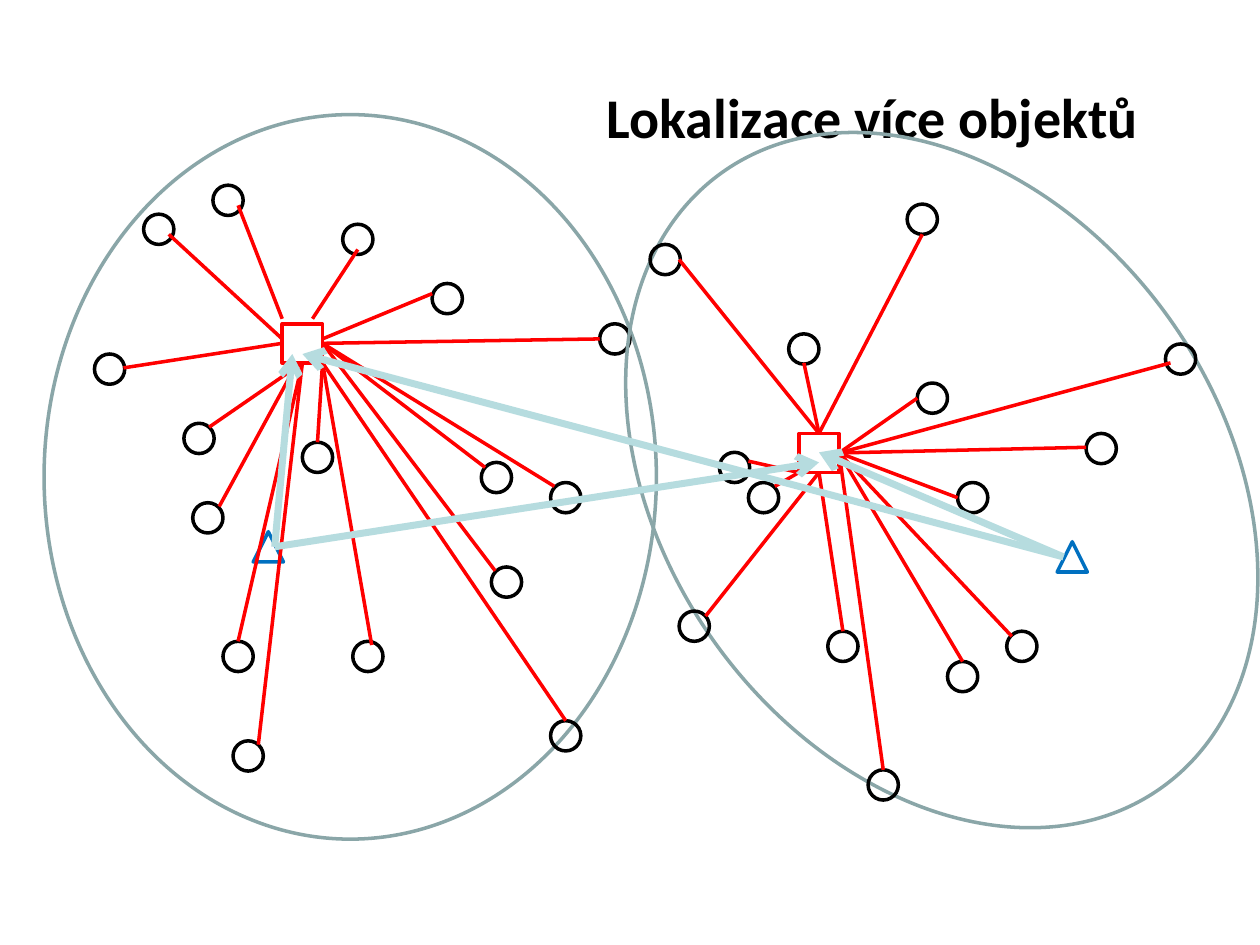
from dataclasses import dataclass

from lxml.etree import SubElement
from pptx import Presentation
from pptx.dml.color import RGBColor as RGB
from pptx.enum.shapes import MSO_CONNECTOR as Link, MSO_SHAPE as Kind
from pptx.enum.text import MSO_ANCHOR as Anchor, MSO_AUTO_SIZE as Auto, PP_ALIGN as Align
from pptx.oxml.ns import qn
from pptx.util import Inches, Pt


@dataclass(frozen=True)
class Theme:
    """Colours, type and line sizes of the slide."""
    ink: RGB = RGB.from_string("000000")
    paper: RGB = RGB.from_string("FFFFFF")
    spoke: RGB = RGB.from_string("FF0000")
    source: RGB = RGB.from_string("0070C0")
    ring: RGB = RGB.from_string("8AA6A8")
    ray: RGB = RGB.from_string("B6DCDF")
    font: str = "Calibri"
    title: int = 32
    thin: int = 2
    thick: int = 4


THEME = Theme()
DOT = 0.24
HUB = (0.32, 0.31)
TOP, LEFT, BASE, RIGHT = range(4)
SITES = {TOP: (0.16, 0), LEFT: (0, 0.16), BASE: (0.16, 0.31), RIGHT: (0.32, 0.16)}
CORNER, FOOT = (0.32, 0.31), (0, 0.31)

WEST = {
    "box": (0.35, 0.91, 4.86, 5.75), "turn": 0, "hub": (1.89, 1.66), "source": (1.66, 3.31),
    "nodes": [
        ((0.79, 0.79), (0.2, 0.16), (0, 0.12)),
        ((1.34, 0.56), (0.2, 0.16), (0, -0.04)),
        ((2.45, 4.18), (0.15, 0.03), CORNER),
        ((2.05, 2.6), (0.12, 0), CORNER),
        ((3.55, 3.59), (0.03, 0.03), RIGHT),
        ((1.11, 2.45), (0.2, 0.03), BASE),
        ((0.4, 1.9), (0.23, 0.11), LEFT),
        ((2.37, 0.87), (0.12, 0.2), (0.24, -0.04)),
        ((1.18, 3.08), (0.21, 0.03), (0.12, 0.31)),
        ((3.08, 1.34), (0, 0.08), (0.32, 0.12)),
        ((4.02, 4.81), (0.12, 0), CORNER),
        ((4.02, 2.92), (0.03, 0.03), RIGHT),
        ((3.47, 2.76), (0.03, 0.04), RIGHT),
        ((1.42, 4.18), (0.12, 0), BASE),
        ((4.41, 1.66), (0, 0.12), RIGHT),
        ((1.5, 4.97), (0.2, 0.03), BASE),
    ],
}
EAST = {
    "box": (5.26, 0.81, 4.43, 6), "turn": 324.4, "hub": (1.08, 2.63), "source": (3.13, 3.49),
    "nodes": [
        ((1.94, 0.81), (0.12, 0.24), TOP),
        ((3.36, 2.63), (0, 0.11), RIGHT),
        ((0.45, 2.78), (0.23, 0.07), FOOT),
        ((-0.1, 1.13), (0.23, 0.12), TOP),
        ((0.68, 3.02), (0.21, 0.03), FOOT),
        ((1, 1.84), (0.12, 0.23), TOP),
        ((0.13, 4.04), (0.21, 0.04), BASE),
        ((2.34, 3.02), (0, 0.12), RIGHT),
        ((2.73, 4.2), (0.04, 0.04), RIGHT),
        ((1.31, 4.2), (0.12, 0), BASE),
        ((2.26, 4.44), (0.12, 0), RIGHT),
        ((2.02, 2.23), (0, 0.12), RIGHT),
        ((3.99, 1.92), (0.04, 0.15), RIGHT),
        ((1.63, 5.3), (0.12, 0), RIGHT),
    ],
}
RAYS = [
    ((2.18, 4.34), (2.32, 2.81)),
    ((2.18, 4.34), (6.5, 3.67)),
    ((8.44, 4.42), (2.4, 2.81)),
    ((8.44, 4.42), (6.5, 3.59)),
]


def style(item, values):
    """Set each attribute of the item from the dict."""
    for name, value in values.items():
        setattr(item, name, value)


def shift(base, step):
    """Return the point moved by the step."""
    return base[0] + step[0], base[1] + step[1]


def outline(slide, kind, spot, size, color):
    """Add an unfilled shape and return it."""
    shape = slide.shapes.add_shape(kind, *map(Inches, (*spot, *size)))
    shape.shadow.inherit = False
    shape.fill.background()
    shape.line.color.rgb = color
    shape.line.width = Pt(THEME.thin)
    return shape


def draw_line(slide, start, end, color, width):
    """Add a straight line without shadow and return it."""
    line = slide.shapes.add_connector(Link.STRAIGHT, *map(Inches, (*start, *end)))
    line.line.color.rgb = color
    line.line.width = Pt(width)
    SubElement(line._element.spPr, qn("a:effectLst"))
    return line


def add_title(slide, box, text):
    """Place the title in its box."""
    title = slide.shapes.title
    style(title, dict(zip(("left", "top", "width", "height"), map(Inches, box))))
    title.fill.solid()
    title.fill.fore_color.rgb = THEME.paper
    frame = title.text_frame
    frame.text = text
    style(frame, {"word_wrap": True, "auto_size": Auto.SHAPE_TO_FIT_TEXT,
                  "vertical_anchor": Anchor.MIDDLE})
    para = frame.paragraphs[0]
    para.alignment = Align.CENTER
    style(para.font, {"name": THEME.font, "size": Pt(THEME.title), "bold": True})
    para.font.color.rgb = THEME.ink


def add_group(slide, box, turn, hub, source, nodes):
    """Draw one ring with its hub, source, nodes and spokes."""
    base = box[:2]
    ring = outline(slide, Kind.OVAL, base, box[2:], THEME.ring)
    ring.rotation = turn
    heart = shift(base, hub)
    square = outline(slide, Kind.RECTANGLE, heart, HUB, THEME.spoke)
    outline(slide, Kind.ISOSCELES_TRIANGLE, shift(base, source), (DOT, DOT), THEME.source)
    for place, tip, goal in nodes:
        spot = shift(base, place)
        outline(slide, Kind.OVAL, spot, (DOT, DOT), THEME.ink)
        end = shift(heart, SITES.get(goal, goal))
        spoke = draw_line(slide, shift(spot, tip), end, THEME.spoke, THEME.thin)
        if goal in SITES:
            spoke.end_connect(square, goal)


def add_rays(slide, rays):
    """Draw the thick arrows from the sources to the hubs."""
    for start, end in rays:
        ray = draw_line(slide, start, end, THEME.ray, THEME.thick)
        SubElement(ray.line._get_or_add_ln(), qn("a:tailEnd"), type="arrow")


def main():
    """Build and save the slide."""
    deck = Presentation()
    style(deck, {"slide_width": Inches(10), "slide_height": Inches(7.5)})
    slide = deck.slides.add_slide(deck.slide_layouts[5])
    add_title(slide, (4.13, 0.6, 5.59, 0.64), "Lokalizace více objektů")
    for group in (WEST, EAST):
        add_group(slide, **group)
    add_rays(slide, RAYS)
    deck.save("out.pptx")


if __name__ == "__main__":
    main()
